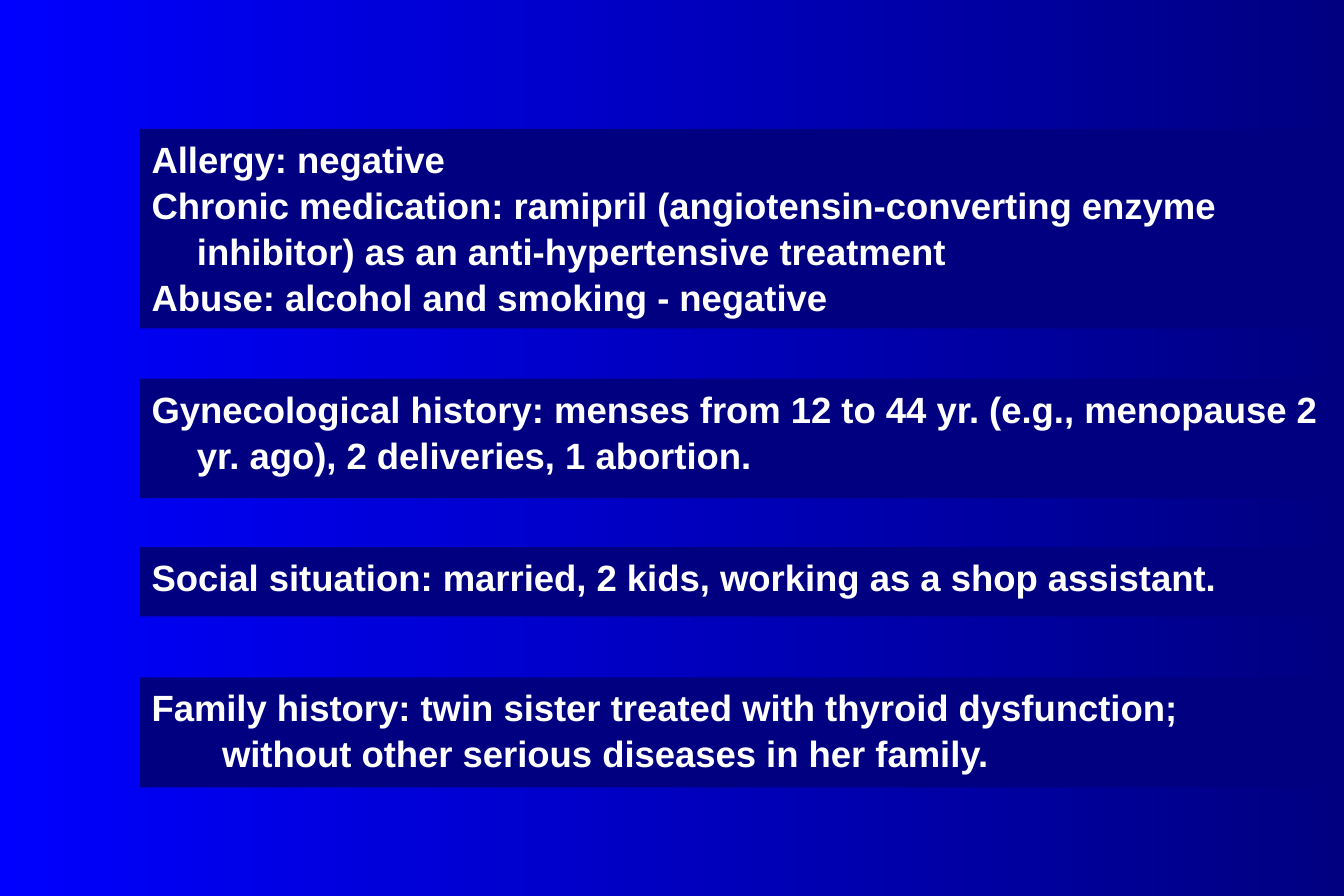
from dataclasses import dataclass

from pptx import Presentation
from pptx import util as u
from pptx.dml import color
from pptx.enum import shapes, text


@dataclass(frozen=True)
class Theme:
    """Colours and type used across the slide."""
    bright: color.RGBColor = color.RGBColor(0x00, 0x00, 0xFF)
    navy: color.RGBColor = color.RGBColor(0x00, 0x00, 0x80)
    white: color.RGBColor = color.RGBColor(0xFF, 0xFF, 0xFF)
    font: str = "Arial"
    size: u.Pt = u.Pt(22)
    line_spacing: float = 1.05


THEME = Theme()
HANGING = (0.38, -0.38)
CONTINUED = (0.59, 0)
PANEL_LEFT, PANEL_WIDTH = 1.17, 10.08

HISTORY = [
    (1.08, 1.67, [
        ("Allergy: negative", HANGING),
        ("Chronic medication: ramipril (angiotensin-converting enzyme "
         "inhibitor) as an anti-hypertensive treatment", HANGING),
        ("Abuse: alcohol and smoking - negative", HANGING),
    ]),
    (3.17, 1, [
        ("Gynecological history: menses from 12 to 44 yr. (e.g., menopause 2 "
         "yr. ago), 2 deliveries, 1 abortion.", HANGING),
    ]),
    (4.58, 0.58, [
        ("Social situation: married, 2 kids, working as a shop assistant.", HANGING),
    ]),
    (5.67, 0.92, [
        ("Family history: twin sister treated with thyroid dysfunction;", HANGING),
        ("without other serious diseases in her family.", CONTINUED),
    ]),
]


def paint_background(slide):
    """Fill the slide with a gradient running from left to right."""
    fill = slide.background.fill
    fill.gradient()
    fill.gradient_angle = 0
    for stop, shade in zip(fill.gradient_stops, (THEME.bright, THEME.navy)):
        stop.color.rgb = shade


def write_paragraph(paragraph, words, indent):
    """Write one statement with its left margin and first-line indent."""
    margin, first_line = indent
    paragraph.alignment = text.PP_ALIGN.LEFT
    paragraph.line_spacing = THEME.line_spacing
    properties = paragraph._p.get_or_add_pPr()
    properties.set("marL", str(u.Inches(margin)))
    properties.set("indent", str(u.Inches(first_line)))
    run = paragraph.add_run()
    run.text = words
    run.font.name = THEME.font
    run.font.size = THEME.size
    run.font.bold = True
    run.font.color.rgb = THEME.white


def add_panel(slide, box, statements):
    """Draw one navy history panel in the given box."""
    shape = slide.shapes.add_shape(
        shapes.MSO_SHAPE.RECTANGLE, *(u.Inches(length) for length in box))
    shape.shadow.inherit = False
    shape.fill.solid()
    shape.fill.fore_color.rgb = THEME.navy
    shape.line.fill.background()
    frame = shape.text_frame
    frame.word_wrap = True
    frame.vertical_anchor = text.MSO_ANCHOR.TOP
    for index, (words, indent) in enumerate(statements):
        paragraph = frame.add_paragraph() if index else frame.paragraphs[0]
        write_paragraph(paragraph, words, indent)


def main():
    """Build and save the patient history slide."""
    presentation = Presentation()
    presentation.slide_width = u.Inches(11.25)
    presentation.slide_height = u.Inches(7.5)
    slide = presentation.slides.add_slide(presentation.slide_layouts[6])
    paint_background(slide)
    for top, height, statements in HISTORY:
        add_panel(slide, (PANEL_LEFT, top, PANEL_WIDTH, height), statements)
    presentation.save("out.pptx")


if __name__ == "__main__":
    main()
